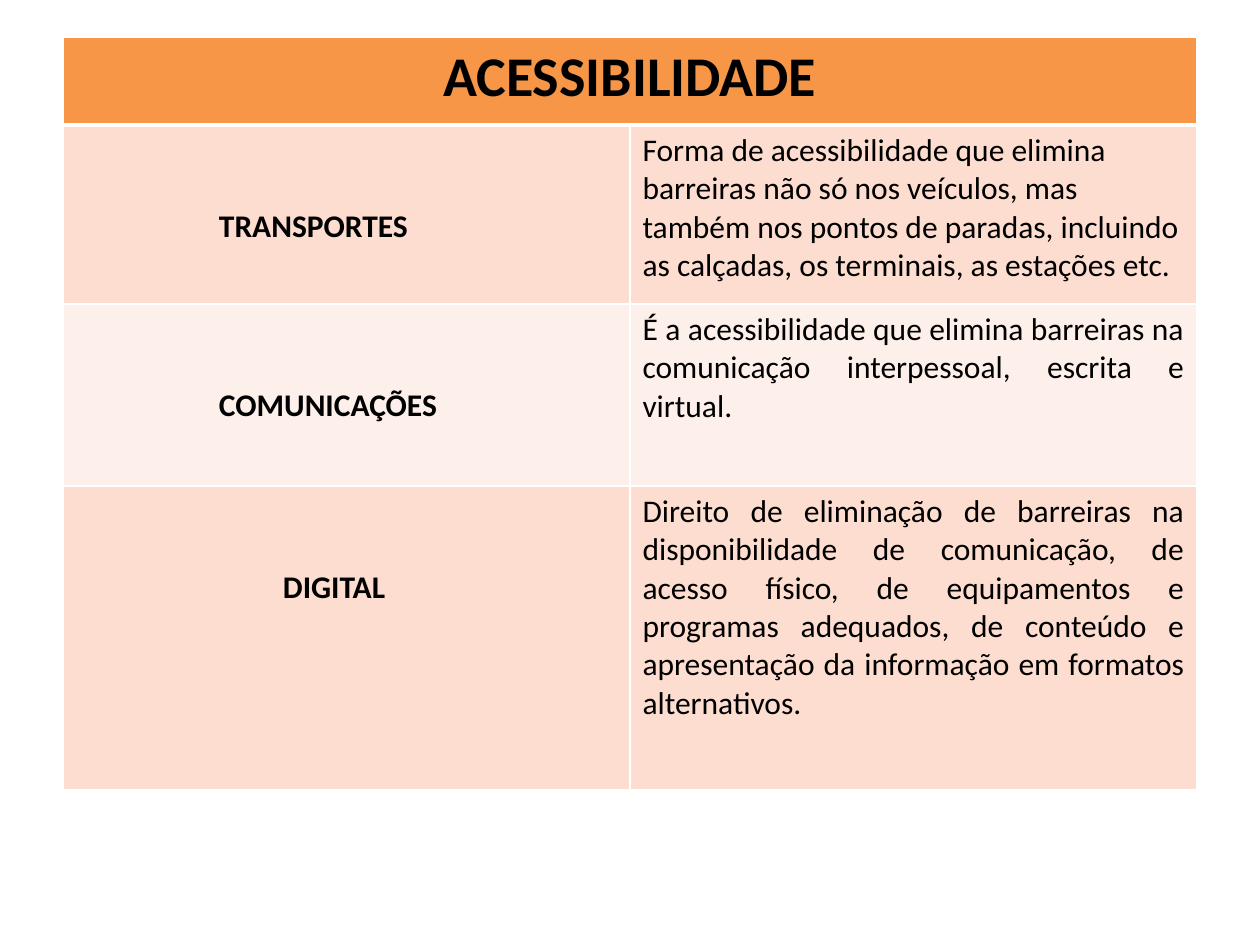
from lxml import etree
from pptx import Presentation, util as u
from pptx.dml.color import RGBColor
from pptx.enum import text
from pptx.oxml.ns import qn

PX = 914400 // 126
COLORS = {"header": "F79646", "dark": "FCDDCF", "light": "FDEFE9",
          "border": "FFFFFF", "text": "000000"}
LEFT, TOP, COLUMN_WIDTH = 63, 37, 567
ALIGN = text.PP_ALIGN

TITLE, TITLE_HEIGHT = "ACESSIBILIDADE", 88
LABEL_TOP = 83
# label, label indent, description, description alignment, row height, fill
ROWS = [
    ("TRANSPORTES", 156,
     "Forma de acessibilidade que elimina barreiras não só nos veículos, mas "
     "também nos pontos de paradas, incluindo as calçadas, os terminais, as "
     "estações etc.", ALIGN.LEFT, 179, "dark"),
    ("COMUNICAÇÕES", 156,
     "É a acessibilidade que elimina barreiras na comunicação interpessoal, "
     "escrita e virtual.", ALIGN.JUSTIFY, 182, "light"),
    ("DIGITAL", 220,
     "Direito de eliminação de barreiras na disponibilidade de comunicação, de "
     "acesso físico, de equipamentos e programas adequados, de conteúdo e "
     "apresentação da informação em formatos alternativos.",
     ALIGN.JUSTIFY, 304, "dark"),
]


def px(value):
    return u.Emu(value * PX)


def set_borders(cell, widths):
    """Draw the left, right, top and bottom borders, with widths in points."""
    properties = cell._tc.get_or_add_tcPr()
    for index, (side, width) in enumerate(zip("LRTB", widths)):
        line = etree.Element(qn(f"a:ln{side}"), w=str(u.Pt(width)))
        fill = etree.SubElement(line, qn("a:solidFill"))
        etree.SubElement(fill, qn("a:srgbClr"), val=COLORS["border"])
        properties.insert(index, line)


def fill_cell(cell, words, fill, align, size=18, bold=False, margins=None):
    cell.fill.solid()
    cell.fill.fore_color.rgb = RGBColor.from_string(COLORS[fill])
    for name, value in (margins or {}).items():
        setattr(cell, name, px(value))
    para = cell.text_frame.paragraphs[0]
    para.alignment = align
    span = para.add_run()
    span.text = words
    font_format = {"name": "Calibri", "size": u.Pt(size), "bold": bold}
    for name, value in font_format.items():
        setattr(span.font, name, value)
    span.font.color.rgb = RGBColor.from_string(COLORS["text"])


def main():
    deck = Presentation()
    deck.slide_width, deck.slide_height = u.Inches(10), u.Inches(7.5)
    page = deck.slides.add_slide(deck.slide_layouts[6])

    heights = [TITLE_HEIGHT] + [row[4] for row in ROWS]
    table = page.shapes.add_table(
        len(heights), 2, px(LEFT), px(TOP),
        px(2 * COLUMN_WIDTH), px(sum(heights))).table
    for column in table.columns:
        column.width = px(COLUMN_WIDTH)
    for row, height in zip(table.rows, heights):
        row.height = px(height)

    header = table.cell(0, 0)
    header.merge(table.cell(0, 1))
    fill_cell(header, TITLE, "header", ALIGN.CENTER, size=32, bold=True)
    for index, (label, indent, words, align, _, fill) in enumerate(ROWS, 1):
        fill_cell(table.cell(index, 0), label, fill, ALIGN.LEFT, bold=True,
                  margins={"margin_left": indent, "margin_top": LABEL_TOP})
        fill_cell(table.cell(index, 1), words, fill, align)

    for index in range(len(heights)):
        top, bottom = {0: (1, 3), 1: (3, 1)}.get(index, (1, 1))
        for column in range(2):
            set_borders(table.cell(index, column), (1, 1, top, bottom))
    deck.save("out.pptx")


if __name__ == "__main__":
    main()
